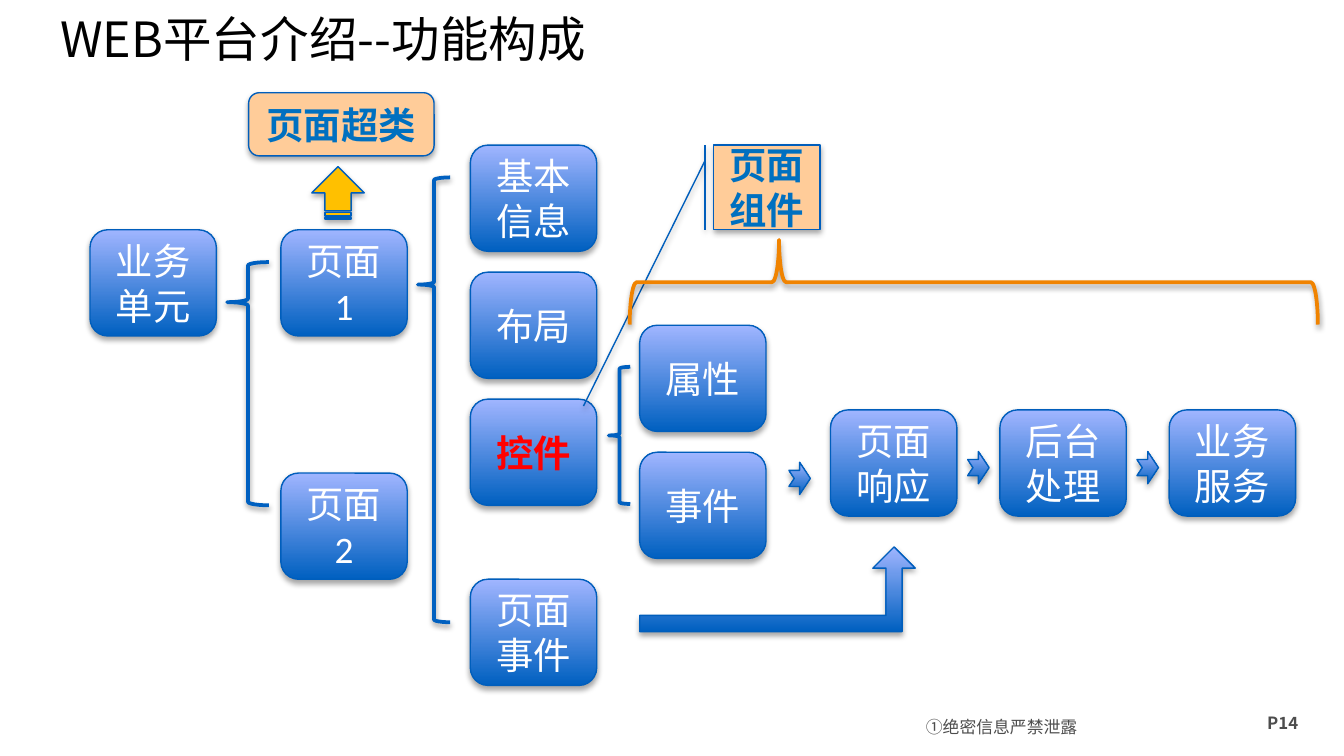
from lxml import etree
from pptx import Presentation
from pptx.dml.color import RGBColor
from pptx.enum.shapes import MSO_SHAPE
from pptx.enum.text import MSO_ANCHOR, PP_ALIGN
from pptx.oxml.ns import qn
from pptx.util import Inches, Pt

ROUND = MSO_SHAPE.ROUNDED_RECTANGLE
BRACE = MSO_SHAPE.LEFT_BRACE
NOTCHED = MSO_SHAPE.NOTCHED_RIGHT_ARROW
STRIPED = MSO_SHAPE.STRIPED_RIGHT_ARROW
BENT_UP = MSO_SHAPE.BENT_UP_ARROW
CALLOUT = MSO_SHAPE.LINE_CALLOUT_1_BORDER_AND_ACCENT_BAR
CENTER, JUSTIFY, LEFT = PP_ALIGN.CENTER, PP_ALIGN.JUSTIFY, PP_ALIGN.LEFT
MIDDLE, TOP = MSO_ANCHOR.MIDDLE, MSO_ANCHOR.TOP

BLACK = RGBColor(0x00, 0x00, 0x00)
WHITE = RGBColor(0xFF, 0xFF, 0xFF)
GRAY = RGBColor(0x4D, 0x4D, 0x4D)
RED = RGBColor(0xFF, 0x00, 0x00)
BLUE = RGBColor(0x00, 0x60, 0xC0)
PALE_BLUE = RGBColor(0xA0, 0xB5, 0xFF)
EDGE_BLUE = RGBColor(0x00, 0x5E, 0xBC)
TEXT_BLUE = RGBColor(0x00, 0x70, 0xC0)
PEACH = RGBColor(0xFF, 0xCC, 0x99)
GOLD = RGBColor(0xFF, 0xC0, 0x00)
ORANGE = RGBColor(0xF0, 0x83, 0x00)

CJK = "Noto Sans CJK SC"
LATIN = "Calibri"
BOX_W, BOX_H = 0.94, 0.79
ROW_STEP, CHAIN_STEP = 1.89 / 2, 1.26


def add_run(p, text, size, font, color, bold=False):
    r = p.add_run()
    r.text = text
    r.font.size = Pt(size)
    r.font.name = font
    r.font.bold = bold
    r.font.color.rgb = color
    etree.SubElement(r.font._element, qn("a:ea"), typeface=CJK)


def add_shadow(sp, alpha, dist):
    sp.shadow.inherit = False
    effects = sp._element.spPr.find(qn("a:effectLst"))
    shadow = etree.SubElement(
        effects, qn("a:outerShdw"), blurRad=str(Pt(3.1)), dist=str(Pt(dist)),
        dir="5400000", rotWithShape="0")
    color = etree.SubElement(shadow, qn("a:srgbClr"), val=str(BLACK))
    etree.SubElement(color, qn("a:alpha"), val=str(alpha * 1000))


def add_figure(s, kind, x, y, w, h, fill=None, adjustments=()):
    sp = s.shapes.add_shape(kind, Inches(x), Inches(y), Inches(w), Inches(h))
    for i, value in enumerate(adjustments):
        sp.adjustments[i] = value
    if fill is None:
        sp.fill.gradient()
        sp.fill.gradient_angle = 90
        for stop, color in zip(sp.fill.gradient_stops, (BLUE, PALE_BLUE)):
            stop.color.rgb = color
    else:
        sp.fill.solid()
        sp.fill.fore_color.rgb = fill
    sp.line.color.rgb = EDGE_BLUE
    sp.line.width = Pt(0.75)
    add_shadow(sp, 35, 1.8)
    return sp


def add_label(sp, text, color=WHITE, bold=False):
    tf = sp.text_frame
    tf.word_wrap = True
    tf.vertical_anchor = MIDDLE
    p = tf.paragraphs[0]
    p.alignment = CENTER
    add_run(p, text, 20, LATIN, color, bold)


def add_box(s, text, x, y, color=WHITE, bold=False):
    add_label(add_figure(s, ROUND, x, y, BOX_W, BOX_H), text, color, bold)


def add_brace(s, x, y, w, h, adjustments, color=BLUE):
    sp = add_figure(s, BRACE, x, y, w, h, adjustments=adjustments)
    sp.fill.background()
    sp.line.color.rgb = color
    sp.line.width = Pt(2)
    sp._element.spPr.remove(sp._element.spPr.find(qn("a:effectLst")))
    add_shadow(sp, 38, 1.6)
    return sp


def add_text(s, text, x, y, w, h, size, color, bold=False, align=LEFT,
             anchor=TOP, insets=(0.1, 0.05), spacing=None):
    tb = s.shapes.add_textbox(Inches(x), Inches(y), Inches(w), Inches(h))
    tf = tb.text_frame
    tf.word_wrap = True
    tf.vertical_anchor = anchor
    tf.margin_left = tf.margin_right = Inches(insets[0])
    tf.margin_top = tf.margin_bottom = Inches(insets[1])
    p = tf.paragraphs[0]
    p.alignment = align
    if spacing:
        p.line_spacing = Pt(spacing)
    add_run(p, text, size, CJK, color, bold)


def add_footer(s, x, y):
    add_text(s, "①绝密信息严禁泄露", x, y + 0.03, 1.77, 0.27, 9, GRAY,
             align=JUSTIFY, insets=(0.08, 0.01), spacing=14)
    add_text(s, "P14", x + 2.52, y, 0.56, 0.25, 9, GRAY, bold=True)


def add_title(s, x, y, w, h):
    add_text(s, "WEB平台介绍--功能构成", x, y, w, h, 26, BLACK, anchor=MIDDLE)


def add_unit_tree(s, x, y):
    add_box(s, "业务单元", x, y)
    add_box(s, "页面1", x + 1.42, y)
    add_box(s, "页面2", x + 1.42, y + 1.81)
    add_brace(s, x + 1.02, y + 0.24, 0.31, 1.81, (0.083, 0.165))


def add_page_parts(s, x, y):
    add_box(s, "基本信息", x, y)
    add_box(s, "布局", x, y + ROW_STEP)
    add_box(s, "控件", x, y + 2 * ROW_STEP, RED, True)
    add_box(s, "页面事件", x, y + 3.23)
    add_brace(s, x - 0.39, y + 0.24, 0.24, 3.31, (0.083, 0.241))


def add_control_parts(s, x, y):
    for i, text in enumerate(("属性", "事件")):
        add_box(s, text, x, y + i * ROW_STEP)
    add_brace(s, x - 0.23, y + 0.31, 0.16, 1.02, (0.083, 0.5))
    add_figure(s, NOTCHED, x + 1.11, y + 1.02, 0.16, 0.24)


def add_response_chain(s, x, y):
    steps = ("页面响应", "后台处理", "业务服务")
    for i, text in enumerate(steps):
        left = x + i * CHAIN_STEP
        add_box(s, text, left, y)
        if i:
            add_figure(s, NOTCHED, left - 0.24, y + 0.31, 0.16, 0.24)
    add_figure(s, BENT_UP, x - 1.42, y + 1.02, 2.05, 0.63,
               adjustments=(0.191, 0.25, 0.25))


def add_superclass(s, x, y):
    sp = add_figure(s, ROUND, x, y, 1.38, 0.47, PEACH)
    add_label(sp, "页面超类", TEXT_BLUE, True)
    arrow = add_figure(s, STRIPED, x + 0.47, y + 0.55, 0.39, 0.39, GOLD)
    arrow.rotation = 270


def add_components(s, x, y):
    sp = add_figure(s, CALLOUT, x, y, 0.79, 0.63, PEACH,
                    (0.188, -0.083, 3.083, -1.226))
    add_label(sp, "页面组件", TEXT_BLUE, True)
    brace = add_brace(s, x + 1.62, y - 1.54, 0.63, 5.12, (0.083, 0.783), ORANGE)
    brace.rotation = 90


prs = Presentation()
prs.slide_width = Inches(10)
prs.slide_height = prs.slide_width * 9 // 16
s = prs.slides.add_slide(prs.slide_layouts[6])
add_footer(s, 6.81, 5.25)
add_title(s, 0.35, 0, 7.8, 0.57)
add_unit_tree(s, 0.67, 1.71)
add_page_parts(s, 3.5, 1.08)
add_control_parts(s, 4.76, 2.42)
add_response_chain(s, 6.18, 3.05)
add_superclass(s, 1.85, 0.69)
add_components(s, 5.31, 1.08)
prs.save("out.pptx")
